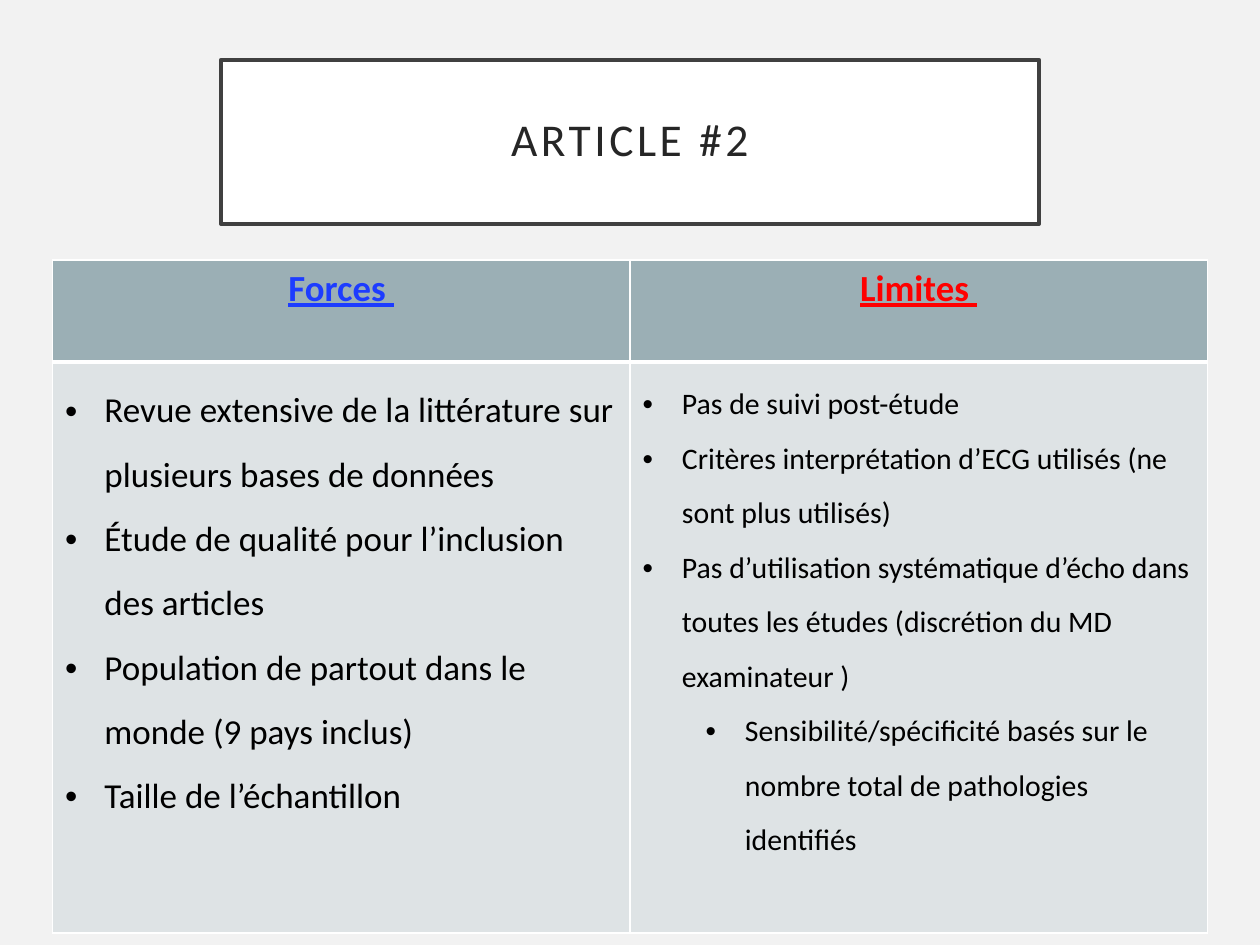
"""Build a slide weighing the strengths and limits of an article."""
from lxml import etree
from pptx import Presentation
from pptx.dml.color import RGBColor
from pptx.enum.shapes import MSO_SHAPE
from pptx.enum.text import MSO_ANCHOR, PP_ALIGN
from pptx.oxml.ns import qn
from pptx.util import Pt

RECTANGLE = MSO_SHAPE.RECTANGLE
MIDDLE = MSO_ANCHOR.MIDDLE
CENTER = PP_ALIGN.CENTER

FONT = "Calibri"
BACKGROUND = RGBColor(0xF2, 0xF2, 0xF2)
WHITE = RGBColor(0xFF, 0xFF, 0xFF)
BLACK = RGBColor(0, 0, 0)
FRAME = RGBColor(0x40, 0x40, 0x40)
TITLE_INK = RGBColor(0x26, 0x26, 0x26)
BLUE = RGBColor(0x1D, 0x3C, 0xFF)
RED = RGBColor(0xFF, 0, 0)
HEADER_FILL = RGBColor(0x9B, 0xAF, 0xB5)
BODY_FILL = RGBColor(0xDE, 0xE3, 0xE5)

TITLE = "ARTICLE #2"
COLUMNS = [
    ("Forces ", BLUE, 20, [
        (0, "Revue extensive de la littérature sur plusieurs bases de données"),
        (0, "Étude de qualité pour l’inclusion des articles"),
        (0, "Population de partout dans le monde (9 pays inclus)"),
        (0, "Taille de l’échantillon"),
    ]),
    ("Limites ", RED, 17, [
        (0, "Pas de suivi post-étude"),
        (0, "Critères interprétation d’ECG utilisés (ne sont plus utilisés)"),
        (0, "Pas d’utilisation systématique d’écho dans toutes les études "
            "(discrétion du MD examinateur )"),
        (1, "Sensibilité/spécificité basés sur le nombre total de pathologies identifiés"),
    ]),
]
COLUMN_WIDTH = 330
HEADER_HEIGHT, BODY_HEIGHT = 58.3, 326.3
HANG, LEVEL_STEP = 22.5, 36


def style(paragraph, size, color, emphasis=False):
    for run in paragraph.runs:
        run.font.name = FONT
        run.font.size = Pt(size)
        run.font.color.rgb = color
        run.font.bold = run.font.underline = emphasis


def add_bullet(paragraph, level):
    paragraph.level = level
    paragraph.line_spacing = 1.5
    properties = paragraph._p.get_or_add_pPr()
    properties.set("marL", str(Pt(HANG + level * LEVEL_STEP)))
    properties.set("indent", str(Pt(-HANG)))
    etree.SubElement(properties, qn("a:buFont"), typeface="Arial")
    etree.SubElement(properties, qn("a:buChar"), char="•")


def paint_cell(cell, color, top, bottom):
    properties = cell._tc.get_or_add_tcPr()
    for side, width in (("L", 1), ("R", 1), ("T", top), ("B", bottom)):
        border = etree.SubElement(properties, qn(f"a:ln{side}"), w=str(Pt(width)))
        fill = etree.SubElement(border, qn("a:solidFill"))
        etree.SubElement(fill, qn("a:srgbClr"), val=str(WHITE))
    cell.fill.solid()
    cell.fill.fore_color.rgb = color


def add_title(slide):
    title = slide.shapes.add_shape(RECTANGLE, Pt(126.3), Pt(34.3), Pt(467.4), Pt(93.6))
    title.shadow.inherit = False
    title.fill.solid()
    title.fill.fore_color.rgb = WHITE
    title.line.color.rgb = FRAME
    title.line.width = Pt(2.5)
    frame = title.text_frame
    frame.text = TITLE
    frame.vertical_anchor = MIDDLE
    frame.margin_left = frame.margin_right = Pt(14.4)
    frame.margin_top = frame.margin_bottom = Pt(14.4)
    heading = frame.paragraphs[0]
    heading.alignment = CENTER
    heading.line_spacing = 0.9
    style(heading, 26, TITLE_INK)
    heading.runs[0].font._element.set("spc", "200")


def add_comparison(slide):
    table = slide.shapes.add_table(
        2, len(COLUMNS), Pt(30), Pt(148.5),
        Pt(COLUMN_WIDTH * len(COLUMNS)), Pt(HEADER_HEIGHT + BODY_HEIGHT)).table
    table.rows[0].height = Pt(HEADER_HEIGHT)
    table.rows[1].height = Pt(BODY_HEIGHT)
    for index, (label, color, size, points) in enumerate(COLUMNS):
        table.columns[index].width = Pt(COLUMN_WIDTH)
        header, body = table.cell(0, index), table.cell(1, index)
        paint_cell(header, HEADER_FILL, 1, 3)
        paint_cell(body, BODY_FILL, 3, 1)
        header.text_frame.text = label
        header.text_frame.paragraphs[0].alignment = CENTER
        style(header.text_frame.paragraphs[0], 21, color, emphasis=True)
        body.text_frame.text = "\n".join(text for _, text in points)
        for paragraph, (level, _) in zip(body.text_frame.paragraphs, points):
            add_bullet(paragraph, level)
            style(paragraph, size, BLACK)


def main():
    deck = Presentation()
    deck.slide_width, deck.slide_height = Pt(720), Pt(540)
    slide = deck.slides.add_slide(deck.slide_layouts[6])
    slide.background.fill.solid()
    slide.background.fill.fore_color.rgb = BACKGROUND
    add_title(slide)
    add_comparison(slide)
    deck.save("out.pptx")


if __name__ == "__main__":
    main()
